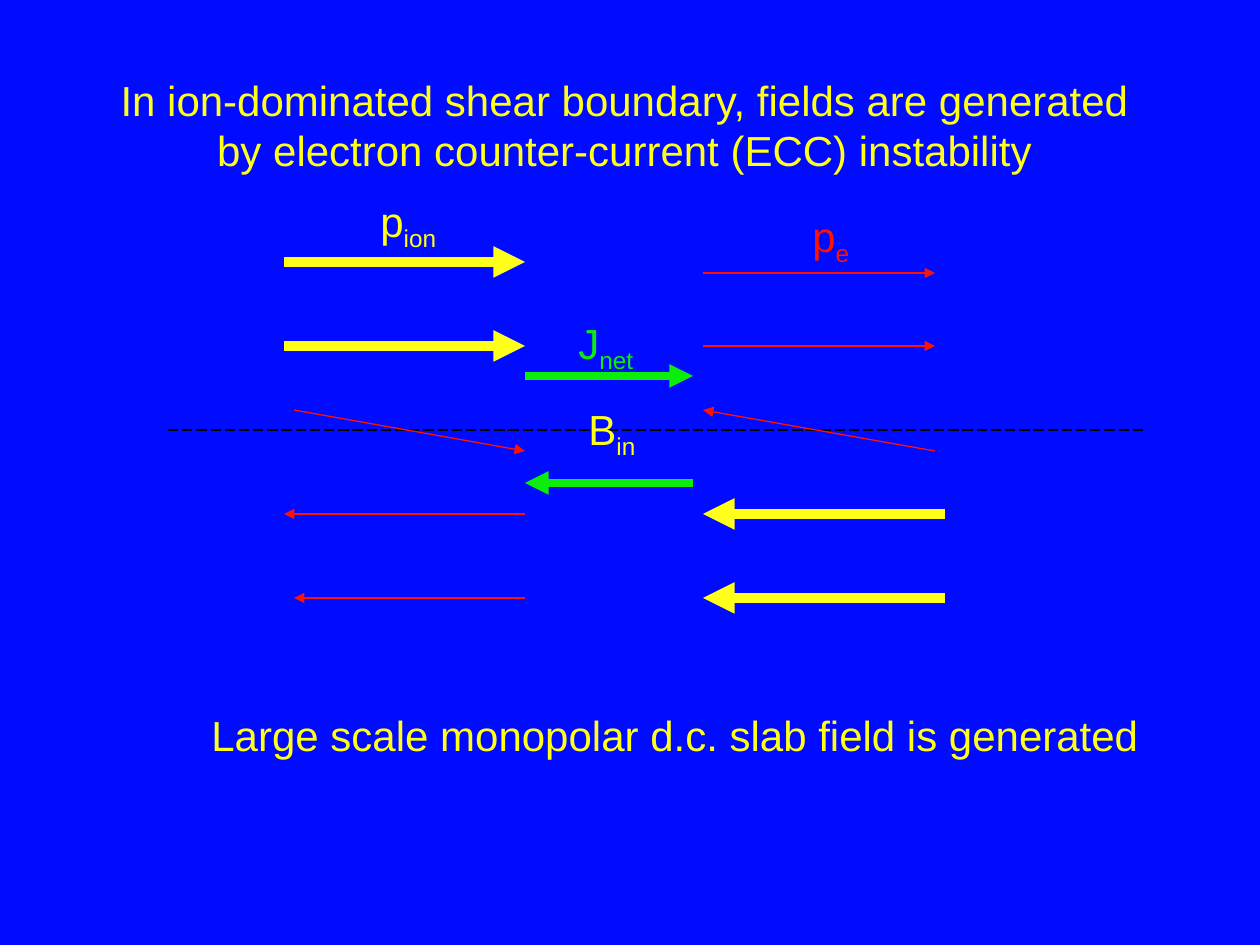
from lxml.etree import SubElement
from pptx import Presentation
from pptx.dml.color import RGBColor
from pptx.enum.dml import MSO_LINE
from pptx.enum.shapes import MSO_CONNECTOR
from pptx.enum.text import MSO_ANCHOR, MSO_AUTO_SIZE as AUTO_SIZE, PP_ALIGN
from pptx.oxml.ns import qn
from pptx.util import Emu, Pt

COLORS = {"blue": "010BFF", "yellow": "FFFF1A", "red": "FF1206",
          "green": "0DED0B", "black": "000000"}
FONT, TEXT_SIZE = "Arial", 24

TITLE = ("In ion-dominated shear boundary, fields are generated\n"
         "by electron counter-current (ECC) instability")
TITLE_BOX = (103, 68, 1043, 115)
CAPTION = ("Large scale monopolar d.c. slab field is generated", "",
           "yellow", (199, 703, 961, 64))
LABELS = [
    ("p", "ion", "yellow", (368, 189, 86, 63)),
    ("p", "e", "red", (800, 204, 64, 63)),
    ("J", "net", "green", (566, 311, 86, 63)),
    ("B", "in", "yellow", (576, 397, 76, 63)),
]
BOUNDARY = (168, 430, 1144, 430)
ARROWS = {
    ("yellow", 6): [(284, 262, 525, 262), (284, 346, 525, 346),
                    (945, 514, 703, 514), (945, 598, 703, 598)],
    ("red", 0.75): [(703, 273, 935, 273), (703, 346, 935, 346),
                    (935, 451, 703, 410), (294, 410, 525, 451),
                    (525, 514, 284, 514), (525, 598, 294, 598)],
    ("green", 4.5): [(525, 376, 693, 376), (693, 483, 525, 483)],
}


def px(value):
    return Emu(round(value * 914400 / 126))


def rgb(name):
    return RGBColor.from_string(COLORS[name])


def add_line(page, ends, color, width):
    line = page.shapes.add_connector(MSO_CONNECTOR.STRAIGHT, *map(px, ends))
    line.line.color.rgb = rgb(color)
    line.line.width = Pt(width)
    SubElement(line._element.spPr, qn("a:effectLst"))
    return line


def add_arrow(page, ends, color, width):
    arrow = add_line(page, ends, color, width)
    SubElement(arrow.line._get_or_add_ln(), qn("a:tailEnd"), type="triangle")


def format_text(frame, color, align):
    frame.word_wrap = False
    frame.vertical_anchor = MSO_ANCHOR.TOP
    for para in frame.paragraphs:
        para.alignment = align
        para.font.name = FONT
        para.font.size = Pt(TEXT_SIZE)
        para.font.color.rgb = rgb(color)


def add_label(page, text, subscript, color, place):
    frame = page.shapes.add_textbox(*map(px, place)).text_frame
    para = frame.paragraphs[0]
    para.add_run().text = text
    if subscript:
        span = para.add_run()
        span.text = subscript
        span.font._element.set("baseline", "-25000")
    format_text(frame, color, PP_ALIGN.LEFT)
    frame.auto_size = AUTO_SIZE.SHAPE_TO_FIT_TEXT


def main():
    deck = Presentation()
    deck.slide_width, deck.slide_height = px(1260), px(945)
    page = deck.slides.add_slide(deck.slide_layouts.get_by_name("Title Only"))
    page.background.fill.solid()
    page.background.fill.fore_color.rgb = rgb("blue")

    title = page.shapes.title
    title.left, title.top, title.width, title.height = map(px, TITLE_BOX)
    title.text_frame.text = TITLE
    format_text(title.text_frame, "yellow", PP_ALIGN.CENTER)
    title.text_frame.auto_size = AUTO_SIZE.NONE

    boundary = add_line(page, BOUNDARY, "black", 0.75)
    boundary.line.dash_style = MSO_LINE.LONG_DASH
    for (color, width), arrows in ARROWS.items():
        for ends in arrows:
            add_arrow(page, ends, color, width)
    for label in [*LABELS, CAPTION]:
        add_label(page, *label)
    deck.save("out.pptx")


if __name__ == "__main__":
    main()
